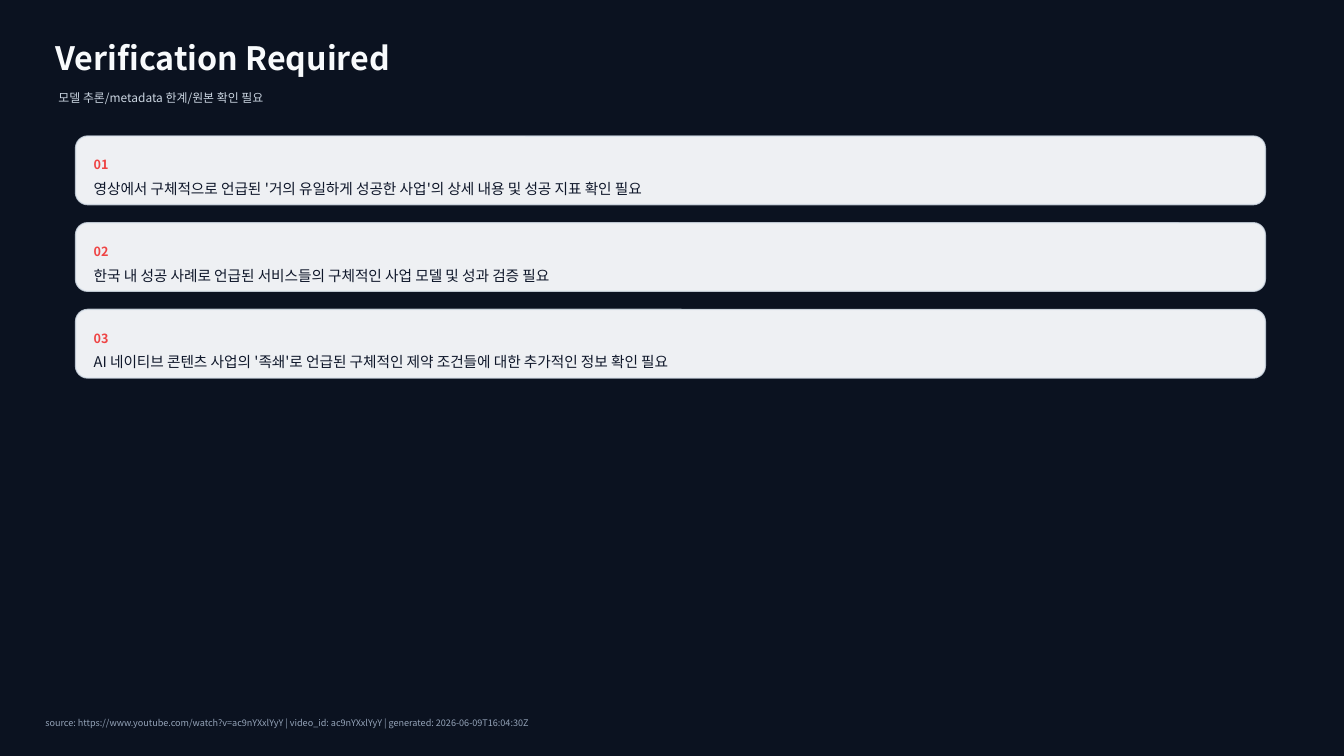
from lxml import etree
from pptx import Presentation
from pptx.dml.color import RGBColor
from pptx.enum.shapes import MSO_SHAPE
from pptx.enum.text import MSO_ANCHOR, MSO_AUTO_SIZE, PP_ALIGN
from pptx.oxml.ns import qn
from pptx.util import Inches, Pt

ROUND = MSO_SHAPE.ROUNDED_RECTANGLE
MIDDLE = MSO_ANCHOR.MIDDLE
NO_FIT = MSO_AUTO_SIZE.NONE
LEFT = PP_ALIGN.LEFT

TITLE = "Verification Required"
SUBTITLE = "모델 추론/metadata 한계/원본 확인 필요"
CHECKS = [
    "영상에서 구체적으로 언급된 '거의 유일하게 성공한 사업'의 상세 내용 및 성공 지표 확인 필요",
    "한국 내 성공 사례로 언급된 서비스들의 구체적인 사업 모델 및 성과 검증 필요",
    "AI 네이티브 콘텐츠 사업의 '족쇄'로 언급된 구체적인 제약 조건들에 대한 추가적인 정보 확인 필요",
]
SOURCE = ("source: https://www.youtube.com/watch?v=ac9nYXxlYyY"
          " | video_id: ac9nYXxlYyY | generated: 2026-06-09T16:04:30Z")

FONT = "Noto Sans CJK KR"
NAVY = RGBColor(0x0B, 0x12, 0x20)
WHITE = RGBColor(0xF8, 0xFA, 0xFC)
SILVER = RGBColor(0xCB, 0xD5, 0xE1)
EDGE = RGBColor(0xD7, 0xE0, 0xEA)
RED = RGBColor(0xEF, 0x44, 0x44)
INK = RGBColor(0x0F, 0x17, 0x2A)
GREY = RGBColor(0x94, 0xA3, 0xB8)

# Card column, in inches
CARD_X, CARD_Y, CARD_W, CARD_H = 0.75, 1.35, 11.8, 0.68
GAP = 0.18
PAD = 0.18


def write(shape, box, text, size, color, bold=False):
    shape.left, shape.top, shape.width, shape.height = map(Inches, box)
    frame = shape.text_frame
    frame.text = text
    frame.word_wrap = True
    frame.auto_size = NO_FIT
    frame.vertical_anchor = MIDDLE
    frame.margin_left = frame.margin_right = 0
    frame.margin_top = frame.margin_bottom = 0
    para = frame.paragraphs[0]
    para.alignment = LEFT
    font = para.font
    font.size, font.bold, font.name = Pt(size), bold, FONT
    font.color.rgb = color
    props = para._p.pPr.find(qn("a:defRPr"))
    etree.SubElement(props, qn("a:ea"), typeface=FONT)


def label(slide, box, *style):
    write(slide.shapes.add_textbox(0, 0, 0, 0), box, *style)


def fade(fill, percent):
    """Make a solid fill partly see-through."""
    tone = fill._xPr.find(qn("a:solidFill"))[0]
    etree.SubElement(tone, qn("a:alpha"), val=str(percent * 1000))


def add_card(slide, index, text):
    top = CARD_Y + index * (CARD_H + GAP)
    card = slide.shapes.add_shape(
        ROUND, *map(Inches, (CARD_X, top, CARD_W, CARD_H)))
    card.adjustments[0] = 0.176
    card.shadow.inherit = False
    card.fill.solid()
    card.fill.fore_color.rgb = WHITE
    fade(card.fill, 96)
    card.line.width = Pt(1)
    card.line.color.rgb = EDGE
    fade(card.line.fill, 80)

    left, width = CARD_X + PAD, CARD_W - 2 * PAD
    label(slide, (left, top + 0.16, width, 0.25), f"{index + 1:02}", 9, RED, True)
    label(slide, (left, top + 0.5, width, 0.04), text, 10.5, INK)


def main():
    deck = Presentation()
    deck.slide_width, deck.slide_height = Inches(13.33), Inches(7.5)
    slide = deck.slides.add_slide(deck.slide_layouts[5])
    slide.background.fill.solid()
    slide.background.fill.fore_color.rgb = NAVY

    write(slide.shapes.title, (0.55, 0.35, 12, 0.45), TITLE, 23, WHITE, True)
    label(slide, (0.58, 0.83, 11.5, 0.28), SUBTITLE, 8.5, SILVER)
    for index, text in enumerate(CHECKS):
        add_card(slide, index, text)
    label(slide, (0.45, 7.05, 12.4, 0.25), SOURCE, 6.5, GREY)
    deck.save("out.pptx")


if __name__ == "__main__":
    main()
